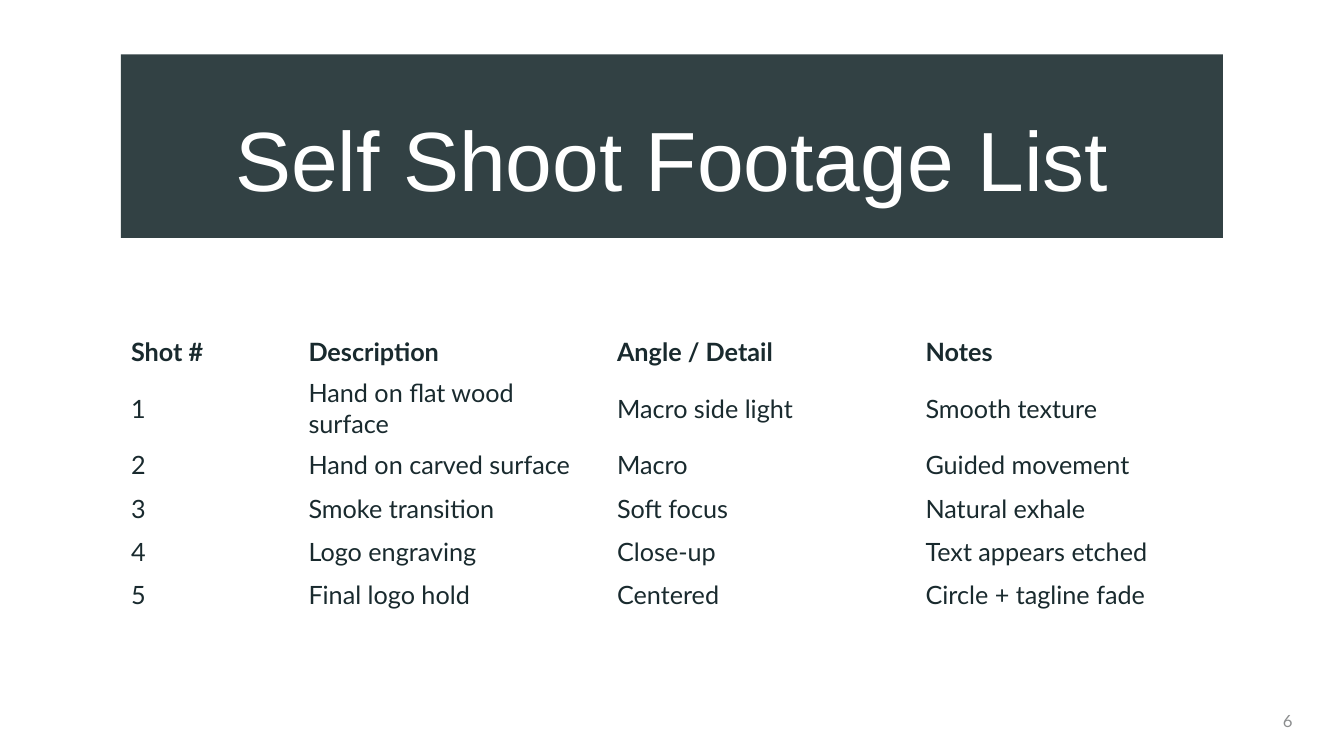
from lxml import etree
from pptx import Presentation
from pptx.dml.color import RGBColor
from pptx.enum.text import MSO_ANCHOR as Anchor, PP_ALIGN as Align
from pptx.oxml.ns import qn
from pptx.util import Inches, Pt

INK = RGBColor(0x19, 0x2A, 0x2E)
WHITE = RGBColor(0xFF, 0xFF, 0xFF)
GRAY = RGBColor(0x8C, 0x8E, 0x8F)

SHOTS = [
    ("Shot #", "Description", "Angle / Detail", "Notes"),
    ("1", "Hand on flat wood surface", "Macro side light", "Smooth texture"),
    ("2", "Hand on carved surface", "Macro", "Guided movement"),
    ("3", "Smoke transition", "Soft focus", "Natural exhale"),
    ("4", "Logo engraving", "Close-up", "Text appears etched"),
    ("5", "Final logo hold", "Centered", "Circle + tagline fade"),
]
COLUMN_WIDTHS = (1.76, 3.06, 3.06, 3.06)
ROW_HEIGHT = 0.43


class SlideBuilder:
    heading_font = "Arial"
    body_font = "Lato"

    def __init__(self, presentation):
        self.slide = presentation.slides.add_slide(presentation.slide_layouts[5])

    def add_text(self, paragraph, text, font, size, color, bold=False):
        run = paragraph.add_run()
        run.text = text
        run.font.name = font
        run.font.size = Pt(size)
        run.font.color.rgb = color
        run.font.bold = bold

    def place(self, shape, left, top, width, height):
        shape.left, shape.top = Inches(left), Inches(top)
        shape.width, shape.height = Inches(width), Inches(height)

    def title(self, text, *box):
        shape = self.slide.shapes.title
        self.place(shape, *box)
        shape.fill.solid()
        shape.fill.fore_color.rgb = INK
        color = shape.element.spPr.find(qn("a:solidFill"))[0]
        etree.SubElement(color, qn("a:alpha"), val="89000")
        frame = shape.text_frame
        frame.word_wrap = True
        frame.vertical_anchor = Anchor.MIDDLE
        frame.margin_left = frame.margin_right = Inches(0.1)
        frame.margin_top, frame.margin_bottom = Inches(0.4), Inches(0.05)
        paragraph = frame.paragraphs[0]
        paragraph.alignment = Align.CENTER
        paragraph.line_spacing = 0.9
        self.add_text(paragraph, text, self.heading_font, 60, WHITE)

    def page_number(self, text, *box):
        shape = self.slide.shapes.add_textbox(*map(Inches, box))
        frame = shape.text_frame
        frame.word_wrap = True
        frame.vertical_anchor = Anchor.MIDDLE
        paragraph = frame.paragraphs[0]
        paragraph.alignment = Align.RIGHT
        paragraph.space_after = Pt(6)
        self.add_text(paragraph, text, self.body_font, 12, GRAY)

    def table(self, rows, widths, row_height, left, top):
        box = (left, top, sum(widths), row_height * len(rows))
        table = self.slide.shapes.add_table(
            len(rows), len(widths), *map(Inches, box)).table
        table.first_row = table.horz_banding = False
        for column, width in zip(table.columns, widths):
            column.width = Inches(width)
        for row_index, texts in enumerate(rows):
            table.rows[row_index].height = Inches(row_height)
            for column_index, text in enumerate(texts):
                cell = table.cell(row_index, column_index)
                cell.fill.background()
                cell.vertical_anchor = Anchor.MIDDLE
                self.add_text(cell.text_frame.paragraphs[0], text,
                              self.body_font, 18, INK, bold=row_index == 0)


def main():
    presentation = Presentation()
    presentation.slide_width = Inches(13.33)
    presentation.slide_height = Inches(7.5)
    builder = SlideBuilder(presentation)
    builder.title("Self Shoot Footage List", 1.2, 0.54, 10.93, 1.82)
    builder.page_number("6", 11.72, 6.95, 1.2, 0.4)
    builder.table(SHOTS, COLUMN_WIDTHS, ROW_HEIGHT, 1.2, 3.27)
    presentation.save("out.pptx")


if __name__ == "__main__":
    main()
